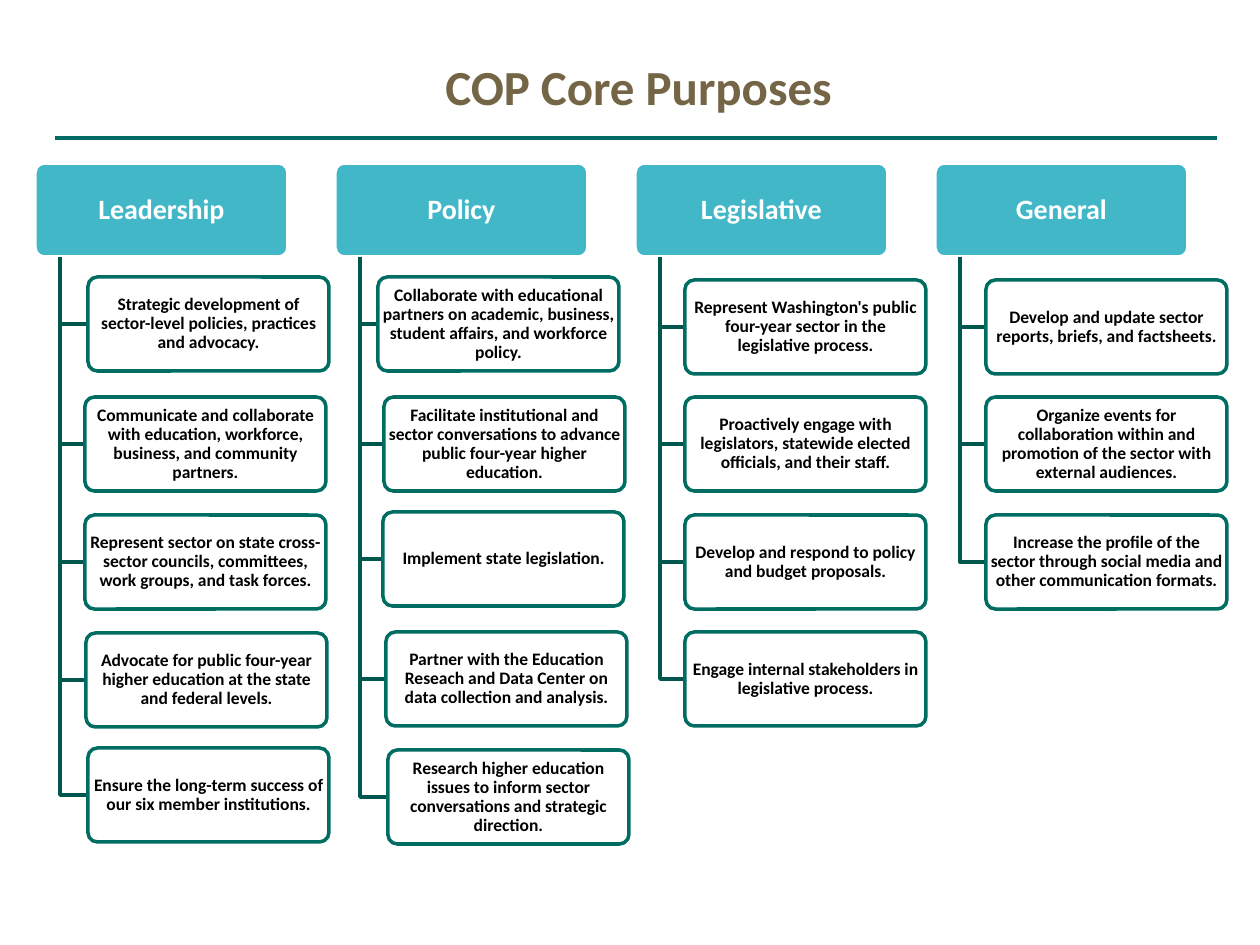
from lxml import etree
from pptx import Presentation
from pptx import util as u
from pptx.dml.color import RGBColor
from pptx.enum import shapes, text
from pptx.oxml.ns import qn

PX = 914400 // 126
FONT = "Calibri"
HEAD_W, HEAD_H = 253, 94
ITEM_W, ITEM_H = 241, 94
TRUNK_X, ITEM_X = 25, 50      # from the column's left edge
FIRST_Y, PITCH = 117, 117.5   # from the column's top edge

# Each item: text, then its shift right and down from the regular grid
COLUMNS = [
    ("Leadership", [
        ("Strategic development of sector-level policies, practices and advocacy.", 3, -3),
        ("Communicate and collaborate with education, workforce, business, and community partners.", 0, 0),
        ("Represent sector on state cross-sector councils, committees, work groups, and task forces.", 0, 0),
        ("Advocate for public four-year higher education at the state and federal levels.", 1, 1),
        ("Ensure the long-term success of our six member institutions.", 3, -2),
    ]),
    ("Policy", [
        ("Collaborate with educational partners on academic, business, student affairs, and workforce policy.", -7, -3),
        ("Facilitate institutional and sector conversations to advance public four-year higher education.", -1, 0),
        ("Implement state legislation.", -2, -3),
        ("Partner with the Education Reseach and Data Center on data collection and analysis.", 1, 0),
        ("Research higher education issues to inform sector conversations and strategic direction.", 3, 0),
    ]),
    ("Legislative", [
        ("Represent Washington's public four-year sector in the legislative process.", 0, 0),
        ("Proactively engage with legislators, statewide elected officials, and their staff.", 0, 0),
        ("Develop and respond to policy and budget proposals.", 0, 0),
        ("Engage internal stakeholders in legislative process.", 0, 0),
    ]),
    ("General", [
        ("Develop and update sector reports, briefs, and factsheets.", 1, 0),
        ("Organize events for collaboration within and promotion of the sector with external audiences.", 1, 0),
        ("Increase the profile of the sector through social media and other communication formats.", 1, 0),
    ]),
]


def px(*values):
    return [int(v * PX) for v in values]


def color(target, value):
    target.rgb = RGBColor.from_string(value)


def outline(sp, value):
    color(sp.line.color, value)
    sp.line.width = u.Pt(2)


def write(tf, words, size, value, spacing=1.0):
    tf.word_wrap = True
    p = tf.paragraphs[0]
    p.alignment = text.PP_ALIGN.CENTER
    p.line_spacing = spacing
    r = p.add_run()
    r.text = words
    r.font.name, r.font.size, r.font.bold = FONT, u.Pt(size), True
    color(r.font.color, value)


def card(s, x, y, w, h, words, size, ink, fill, line):
    sp = s.shapes.add_shape(shapes.MSO_SHAPE.ROUNDED_RECTANGLE, *px(x, y, w, h))
    sp.adjustments[0] = 0.1
    sp.shadow.inherit = False
    sp.fill.solid()
    color(sp.fill.fore_color, fill)
    outline(sp, line)
    tf = sp.text_frame
    tf.margin_left = tf.margin_right = px(2)[0]
    tf.margin_top = tf.margin_bottom = px(1)[0]
    tf.vertical_anchor = text.MSO_ANCHOR.MIDDLE
    write(tf, words, size, ink, 0.9)
    return sp


def elbow(s, x, top, bottom, right):
    path = s.shapes.build_freeform(*px(x, top))
    path.add_line_segments([px(x, bottom), px(right, bottom)], close=False)
    sp = path.convert_to_shape()
    sp.shadow.inherit = False
    sp.fill.background()
    outline(sp, "00574E")


def title(s, x, y, w, h):
    sp = s.shapes.add_textbox(*px(x, y, w, h))
    write(sp.text_frame, "COP Core Purposes", 28, "736545")
    # Rule under the title
    rule = s.shapes.add_connector(shapes.MSO_CONNECTOR.STRAIGHT,
                                  *px(x, y + 88, x + 1162, y + 88))
    outline(rule, "006A63")
    etree.SubElement(rule._element.spPr, qn("a:effectLst"))


def column(s, x, y, heading, items):
    card(s, x, y, HEAD_W, HEAD_H, heading, 16, "FFFFFF", "41B7C7", "FFFFFF")
    for i, (words, dx, dy) in enumerate(items):
        left = x + ITEM_X + dx
        top = y + FIRST_Y + int(i * PITCH) + dy
        elbow(s, x + TRUNK_X, y + HEAD_H, top + ITEM_H // 2, left)
        sp = card(s, left, top, ITEM_W, ITEM_H, words, 10, "000000", "FFFFFF", "006D62")
        # Slightly transparent fill
        fill = sp._element.spPr.find(qn("a:solidFill"))
        etree.SubElement(fill[0], qn("a:alpha"), val="90000")


def main():
    prs = Presentation()
    prs.slide_width, prs.slide_height = u.Inches(10), u.Inches(7.5)
    s = prs.slides.add_slide(prs.slide_layouts[6])
    title(s, 55, 50, 1167, 178)
    for i, (heading, items) in enumerate(COLUMNS):
        column(s, 35 + 300 * i, 163, heading, items)
    prs.save("out.pptx")


if __name__ == "__main__":
    main()
